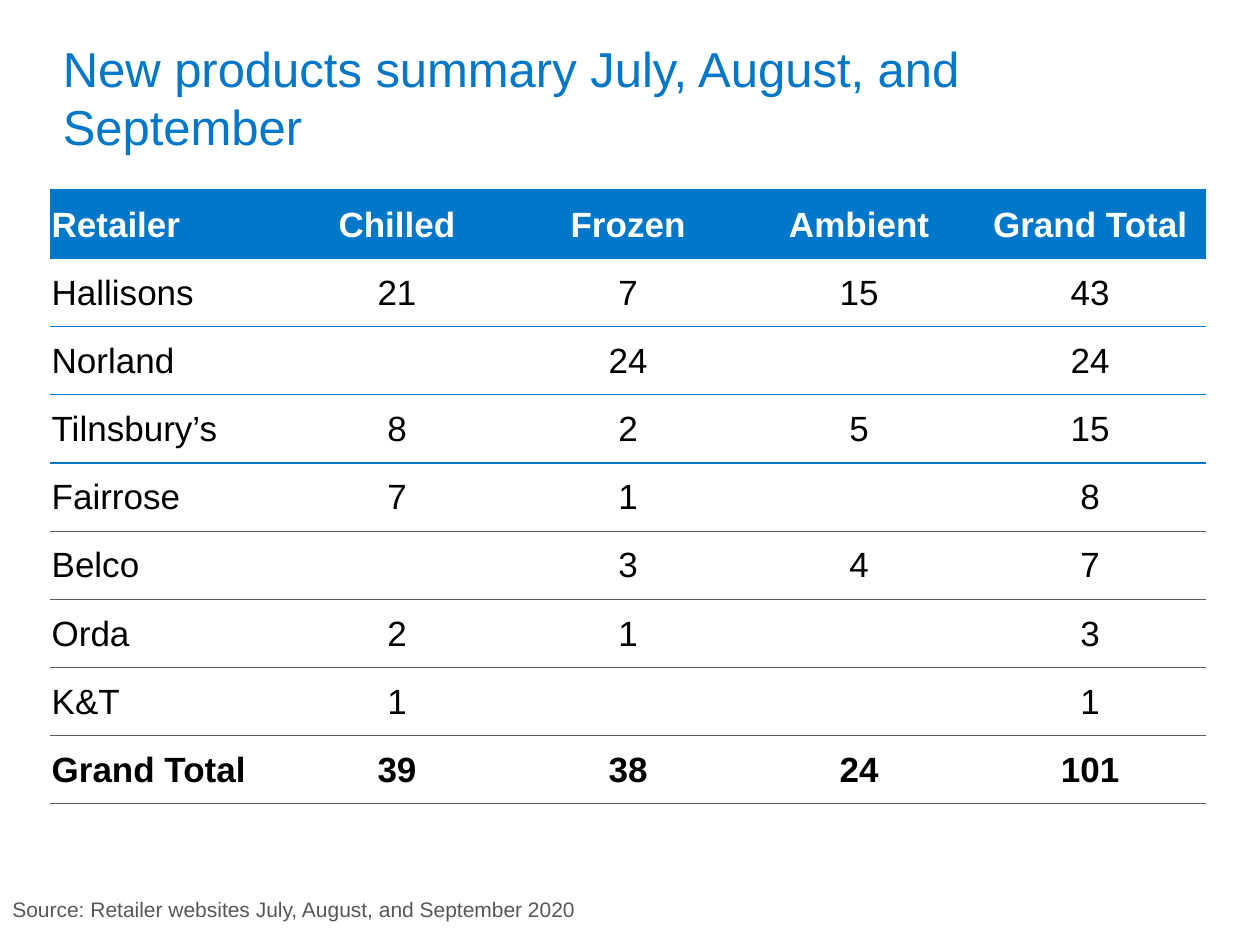
from dataclasses import dataclass

from lxml import etree
from pptx import Presentation
from pptx.dml.color import RGBColor
from pptx.enum.text import MSO_ANCHOR, PP_ALIGN
from pptx.oxml.ns import qn
from pptx.util import Inches, Pt

MIDDLE, TOP = MSO_ANCHOR.MIDDLE, MSO_ANCHOR.TOP
LEFT, CENTER = PP_ALIGN.LEFT, PP_ALIGN.CENTER
NO_GRID_STYLE = "{2D5ABB26-0587-4C30-8999-92F81FD0307C}"


@dataclass(frozen=True)
class Theme:
    """Colours, type sizes and rule widths of the slide."""
    font: str = "Arial"
    blue: str = "0077C8"
    grey: str = "54585A"
    black: str = "000000"
    white: str = "FFFFFF"
    title: int = 28
    body: int = 20
    source: int = 12
    rule: float = 1
    thin_rule: float = 0.5


THEME = Theme()
SLIDE_W, SLIDE_H = 10, 7.5
MARGIN, CONTENT_W = 0.4, 9.17
BLUE_RULED_ROWS = 4

ROWS = [
    ("Retailer", "Chilled", "Frozen", "Ambient", "Grand Total"),
    ("Hallisons", "21", "7", "15", "43"),
    ("Norland", "", "24", "", "24"),
    ("Tilnsbury’s", "8", "2", "5", "15"),
    ("Fairrose", "7", "1", "", "8"),
    ("Belco", "", "3", "4", "7"),
    ("Orda", "2", "1", "", "3"),
    ("K&T", "1", "", "", "1"),
    ("Grand Total", "39", "38", "24", "101"),
]


def style_text(tf, text, size, color, bold=False, align=LEFT):
    """Write one paragraph and format it."""
    tf.text = text
    p = tf.paragraphs[0]
    p.alignment = align
    font = p.runs[0].font if p.runs else p.font
    font.name, font.size, font.bold = THEME.font, Pt(size), bold
    font.color.rgb = RGBColor.from_string(color)


def add_text(slide, box, text, size, color, anchor):
    """Place a wrapped text box in the given box."""
    tf = slide.shapes.add_textbox(*map(Inches, box)).text_frame
    tf.word_wrap = True
    tf.vertical_anchor = anchor
    style_text(tf, text, size, color)


def add_rule(cell, edge, color, width):
    """Draw a solid border on one edge of a cell."""
    ln = etree.Element(qn(f"a:{edge}"), w=str(Pt(width)))
    fill = etree.SubElement(ln, qn("a:solidFill"))
    etree.SubElement(fill, qn("a:srgbClr"), val=color)
    cell._tc.get_or_add_tcPr().insert(0, ln)


def fill_cell(cell, text, row, col):
    """Write and format a cell by its place in the table."""
    header, total = row == 0, row == len(ROWS) - 1
    cell.margin_left = cell.margin_top = cell.margin_right = Inches(0.01)
    cell.margin_bottom = 0
    cell.vertical_anchor = MIDDLE
    style_text(cell.text_frame, text, THEME.body,
               THEME.white if header else THEME.black,
               header or total, CENTER if col else LEFT)
    if header:
        cell.fill.solid()
        cell.fill.fore_color.rgb = RGBColor.from_string(THEME.blue)
    else:
        cell.fill.background()
    if row < BLUE_RULED_ROWS:
        add_rule(cell, "lnB", THEME.blue, THEME.rule)
    else:
        add_rule(cell, "lnB", THEME.grey, THEME.thin_rule)
    if header:
        add_rule(cell, "lnT", THEME.blue, THEME.rule)


def add_summary_table(slide, box):
    """Place the retailer table with equal rows and columns."""
    left, top, width, height = map(Inches, box)
    n_rows, n_cols = len(ROWS), len(ROWS[0])
    table = slide.shapes.add_table(n_rows, n_cols, left, top, width, height).table
    table.horz_banding = False
    table._tbl.tblPr.find(qn("a:tableStyleId")).text = NO_GRID_STYLE
    for row, values in enumerate(ROWS):
        for col, text in enumerate(values):
            fill_cell(table.cell(row, col), text, row, col)


def main():
    """Build the slide and save it."""
    prs = Presentation()
    prs.slide_width, prs.slide_height = Inches(SLIDE_W), Inches(SLIDE_H)
    slide = prs.slides.add_slide(prs.slide_layouts[6])
    add_text(slide, (MARGIN, 0.3, CONTENT_W, 0.94),
             "New products summary July, August, and September",
             THEME.title, THEME.blue, MIDDLE)
    add_summary_table(slide, (MARGIN, 1.51, CONTENT_W, 4.87))
    add_text(slide, (0, 7.07, SLIDE_W, 0.3),
             "Source: Retailer websites July, August, and September 2020",
             THEME.source, THEME.grey, TOP)
    prs.save("out.pptx")


if __name__ == "__main__":
    main()
